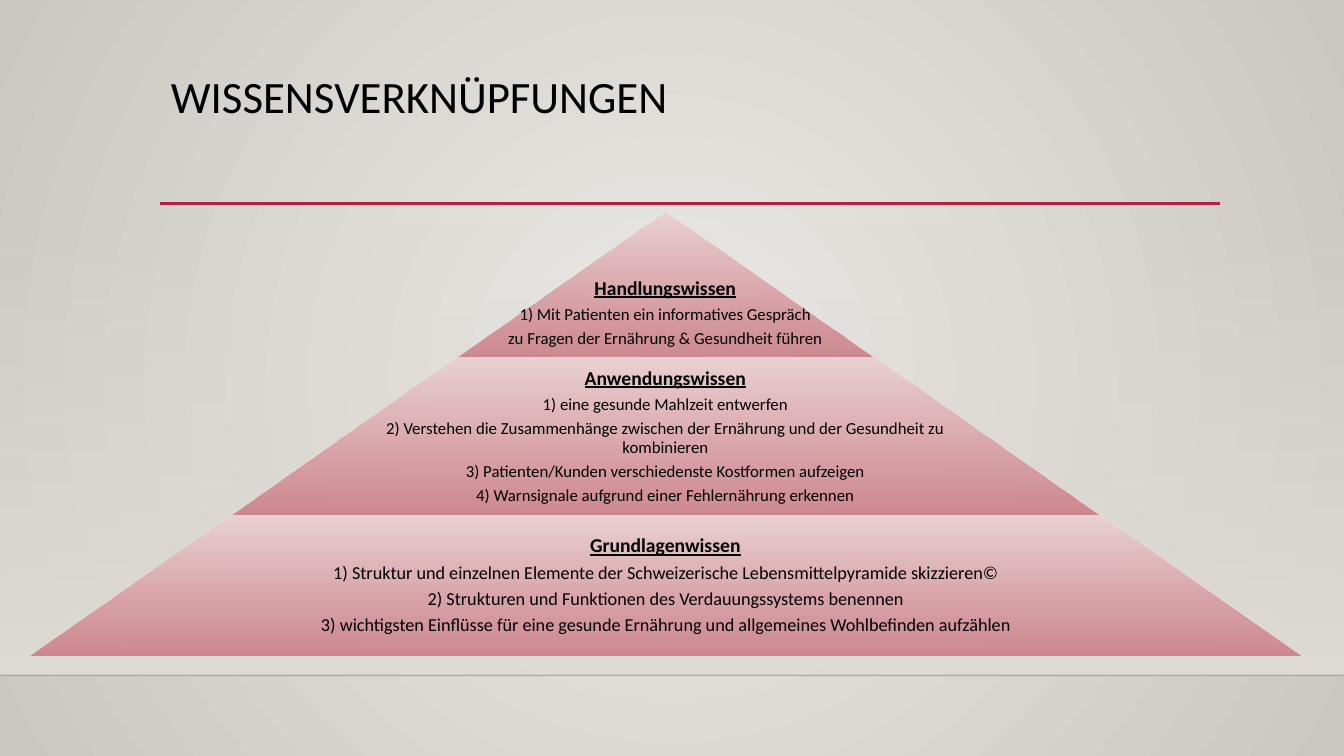
from dataclasses import dataclass
from lxml import etree
from pptx import Presentation
from pptx.dml.color import RGBColor
from pptx.enum.shapes import MSO_CONNECTOR, MSO_SHAPE
from pptx.enum.text import MSO_ANCHOR, PP_ALIGN
from pptx.oxml.ns import qn
from pptx.util import Pt

LINE = MSO_CONNECTOR.STRAIGHT
RECT, TRAP = MSO_SHAPE.RECTANGLE, MSO_SHAPE.TRAPEZOID
MIDDLE, BOTTOM = MSO_ANCHOR.MIDDLE, MSO_ANCHOR.BOTTOM
LEFT, CENTER = PP_ALIGN.LEFT, PP_ALIGN.CENTER


@dataclass(frozen=True)
class Theme:
    font: str = "Calibri"
    ink: str = "000000"
    back: tuple = ("ECEAE7", "CAC7C1")
    wall: str = "DFDBD5"
    floor: str = "000001"
    rule: str = "B71E42"
    tier: tuple = ("EAD1D3", "CD828A")
    title: float = 32
    head: float = 14
    body: float = 12
    base: float = 13


THEME = Theme()
WIDTH, HEIGHT = 960, 540
SLOPE = 1.432  # half the width gained per unit of depth

# Height, text width share, text size, anchor, bottom inset, heading, lines
TIERS = [
    (104.4, 1, THEME.body, BOTTOM, 6.5, "Handlungswissen", [
        "1) Mit Patienten ein informatives Gespräch",
        "zu Fragen der Ernährung & Gesundheit führen"]),
    (112.6, 0.65, THEME.body, MIDDLE, 1.5, "Anwendungswissen", [
        "1) eine gesunde Mahlzeit entwerfen",
        "2) Verstehen die Zusammenhänge zwischen der Ernährung und der "
        "Gesundheit zu kombinieren",
        "3) Patienten/Kunden verschiedenste Kostformen aufzeigen",
        "4) Warnsignale aufgrund einer Fehlernährung erkennen"]),
    (100.4, 0.65, THEME.base, MIDDLE, 1.5, "Grundlagenwissen", [
        "1) Struktur und einzelnen Elemente der Schweizerische "
        "Lebensmittelpyramide skizzieren©",
        "2) Strukturen und Funktionen des Verdauungssystems benennen",
        "3) wichtigsten Einflüsse für eine gesunde Ernährung und allgemeines "
        "Wohlbefinden aufzählen"]),
]


def fade(node, alpha):
    """Set the opacity, in percent, of a colour element."""
    etree.SubElement(node, qn("a:alpha")).set("val", str(alpha * 1000))


def blend(fill, tones):
    fill.gradient()
    for stop, tone in zip(fill.gradient_stops, tones):
        stop.color.rgb = RGBColor.from_string(tone)


def add_block(slide, kind, box, tones, alphas):
    """Place a shape with a gradient from top to bottom."""
    shape = slide.shapes.add_shape(kind, *map(Pt, box))
    shape.shadow.inherit = False
    blend(shape.fill, tones)
    shape.fill.gradient_angle = 270
    shape.line.fill.background()
    for node, alpha in zip(shape._element.iter(qn("a:srgbClr")), alphas):
        if alpha < 100:
            fade(node, alpha)
    return shape


def add_rule(slide, left, right, y, tone, weight):
    rule = slide.shapes.add_connector(LINE, Pt(left), Pt(y), Pt(right), Pt(y))
    rule.line.color.rgb = RGBColor.from_string(tone)
    rule.line.width = Pt(weight)
    etree.SubElement(rule._element.spPr, qn("a:effectLst"))
    return rule


def add_text(slide, box, anchor, insets):
    frame = slide.shapes.add_textbox(*map(Pt, box)).text_frame
    frame.word_wrap = True
    frame.vertical_anchor = anchor
    (frame.margin_left, frame.margin_top,
     frame.margin_right, frame.margin_bottom) = map(Pt, insets)
    return frame


def set_para(para, text, size, align, after=0, head=False):
    para.text = text
    para.alignment = align
    para.line_spacing = 0.9
    para.space_after = Pt(after)
    font = para.font
    font.name, font.size = THEME.font, Pt(size)
    font.color.rgb = RGBColor.from_string(THEME.ink)
    font.bold = font.underline = head


def add_back(slide):
    """Round background glow, wall panel and floor line."""
    blend(slide.background.fill, THEME.back)
    lin = next(slide._element.iter(qn("a:lin")))
    glow = etree.Element(qn("a:path"))
    glow.set("path", "circle")
    rect = etree.SubElement(glow, qn("a:fillToRect"))
    for side in "ltrb":
        rect.set(side, "50000")
    lin.getparent().replace(lin, glow)

    top, floor = 159, 482.4
    add_block(slide, RECT, (0, top, WIDTH, floor - top),
              (THEME.wall, THEME.wall), (0, 100))
    line = add_rule(slide, 0, WIDTH, floor, THEME.floor, 1)
    fade(next(line._element.spPr.iter(qn("a:srgbClr"))), 20)


def add_title(slide, box, text):
    """Title with the red rule below it."""
    left, top, width, height = box
    add_rule(slide, left - 0.5, left + width + 0.5, top + 95.5, THEME.rule, 2.5)
    frame = add_text(slide, box, MIDDLE, (7.2, 3.6, 7.2, 3.6))
    set_para(frame.paragraphs[0], text, THEME.title, LEFT)


def add_tiers(slide, mid, top):
    """Pyramid of tiers, growing down from its tip at (mid, top)."""
    depth = 0
    for height, share, size, anchor, foot, head, lines in TIERS:
        y = top + depth
        depth += height
        width = 2 * SLOPE * depth
        block = add_block(slide, TRAP, (mid - width / 2, y, width, height),
                          THEME.tier, (100, 92))
        block.adjustments[0] = SLOPE
        span = width * share
        frame = add_text(slide, (mid - span / 2, y, span, height), anchor,
                         (1.5, 1.5, 1.5, foot))
        set_para(frame.paragraphs[0], head, THEME.head, CENTER,
                 0.35 * THEME.head, True)
        for line in lines:
            set_para(frame.add_paragraph(), line, size, CENTER, 0.35 * size)


def main():
    deck = Presentation()
    deck.slide_width, deck.slide_height = Pt(WIDTH), Pt(HEIGHT)
    slide = deck.slides.add_slide(deck.slide_layouts[6])
    add_back(slide)
    add_title(slide, (115, 49.7, 756, 42.5), "WISSENSVERKNÜPFUNGEN")
    add_tiers(slide, 475.3, 151.1)
    deck.save("out.pptx")


if __name__ == "__main__":
    main()
